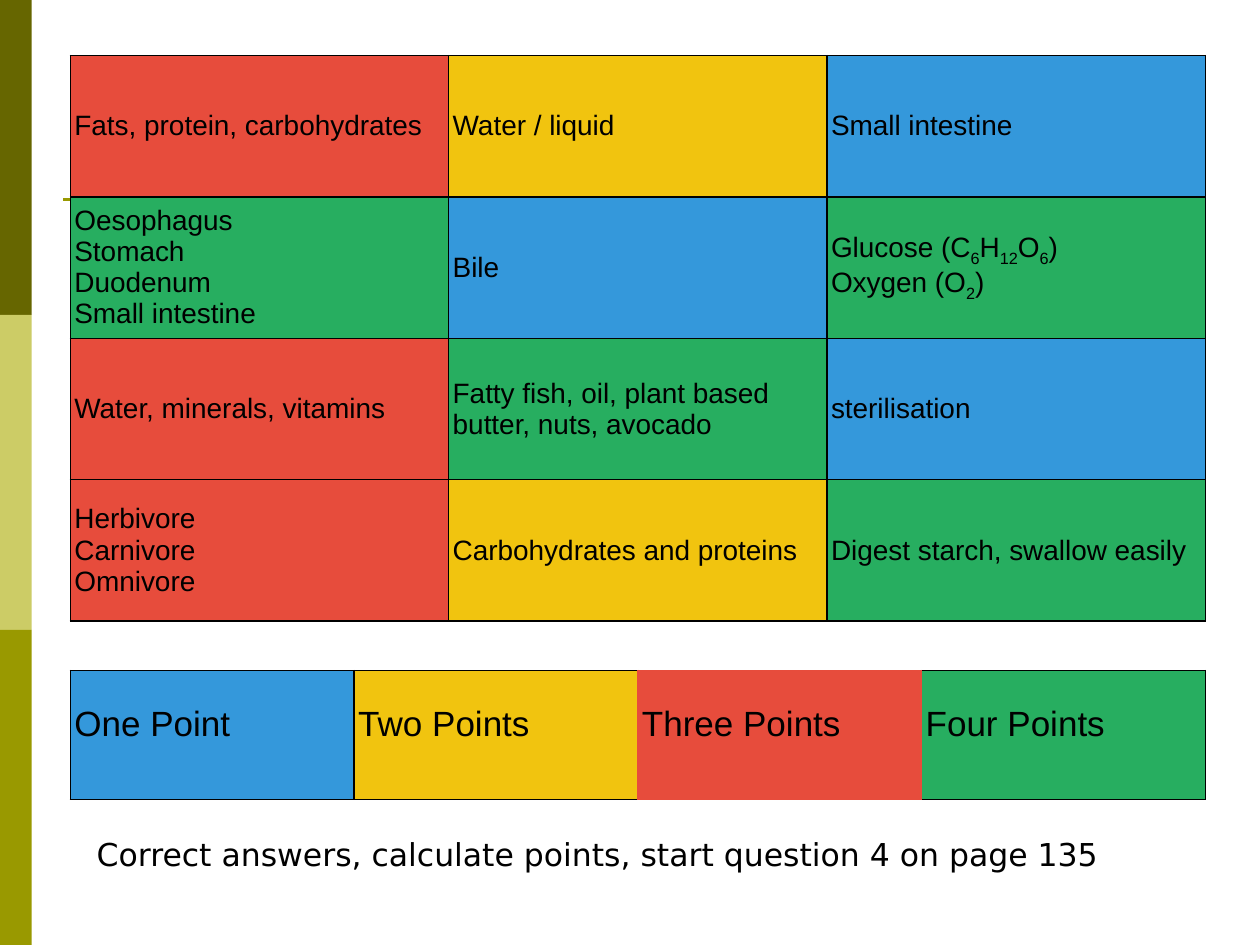
import pptx
import pptx.dml.color
import pptx.enum.shapes
import pptx.enum.text
import pptx.oxml
import pptx.oxml.ns
import pptx.util
from pptx.util import Cm

COLOURS = {
    "red": "E74C3C", "yellow": "F1C40F", "blue": "3498DB", "green": "27AE60",
    "black": "000000", "dark olive": "666600", "pale olive": "CCCC66", "olive": "999900",
}

# A bar in an answer starts or ends a subscript.
ANSWERS = [
    [("red", ["Fats, protein, carbohydrates"]),
     ("yellow", ["Water / liquid"]),
     ("blue", ["Small intestine"])],
    [("green", ["Oesophagus", "Stomach", "Duodenum", "Small intestine"]),
     ("blue", ["Bile"]),
     ("green", ["Glucose (C|6|H|12|O|6|)", "Oxygen (O|2|)"])],
    [("red", ["Water, minerals, vitamins"]),
     ("green", ["Fatty fish, oil, plant based butter, nuts, avocado"]),
     ("blue", ["sterilisation"])],
    [("red", ["Herbivore", "Carnivore", "Omnivore"]),
     ("yellow", ["Carbohydrates and proteins"]),
     ("green", ["Digest starch, swallow easily"])],
]
POINTS = [[("blue", ["One Point"]), ("yellow", ["Two Points"]),
           ("red", ["Three Points"]), ("green", ["Four Points"])]]
POINT_BORDERS = {1: {"R": "red"}, 2: dict.fromkeys("LRTB", "red"), 3: {"L": "red"}}


def rgb(name):
    return pptx.dml.color.RGBColor.from_string(COLOURS[name])


class Builder:
    table_font = "Arial"
    note_font = "DejaVu Sans"
    inset = Cm(0.08)

    def __init__(self, page):
        self.page = page

    def add_spans(self, para, text, size, font):
        for index, part in enumerate(text.split("|")):
            span = para.add_run()
            span.text = part
            span.font.size = pptx.util.Pt(size)
            span.font.name = font
            span.font.color.rgb = rgb("black")
            if index % 2:
                span.font._element.set("baseline", "-25000")

    def bar(self, left, top, width, height, colour):
        shape = self.page.shapes.add_shape(
            pptx.enum.shapes.MSO_SHAPE.RECTANGLE, left, top, width, height)
        shape.shadow.inherit = False
        shape.fill.solid()
        shape.fill.fore_color.rgb = rgb(colour)
        shape.line.fill.background()

    def rule(self, left, right, top, colour):
        line = self.page.shapes.add_connector(
            pptx.enum.shapes.MSO_CONNECTOR.STRAIGHT, left, top, right, top)
        line.line.color.rgb = rgb(colour)
        line.line.width = pptx.util.Pt(1.5)
        line._element.spPr.append(pptx.oxml.parse_xml(
            f"<a:effectLst {pptx.oxml.ns.nsdecls('a')}/>"))

    def borders(self, cell, changes):
        """Draw black cell borders, except for the sides in changes."""
        properties = cell._tc.get_or_add_tcPr()
        for side in "LRTB":
            colour = COLOURS[changes.get(side, "black")]
            properties.append(pptx.oxml.parse_xml(
                f'<a:ln{side} {pptx.oxml.ns.nsdecls("a")} w="12700"><a:solidFill>'
                f'<a:srgbClr val="{colour}"/></a:solidFill></a:ln{side}>'))

    def table(self, left, top, width, height, rows, size, bottom=inset, changes=None):
        """Draw a grid of (colour, lines) cells; changes holds borders by column."""
        table = self.page.shapes.add_table(
            len(rows), len(rows[0]), left, top, width, height).table
        table.first_row = table.horz_banding = False
        for row_index, row in enumerate(rows):
            for column, (colour, lines) in enumerate(row):
                cell = table.cell(row_index, column)
                cell.margin_left = cell.margin_right = cell.margin_top = self.inset
                cell.margin_bottom = bottom
                cell.vertical_anchor = pptx.enum.text.MSO_ANCHOR.MIDDLE
                self.borders(cell, (changes or {}).get(column, {}))
                cell.fill.solid()
                cell.fill.fore_color.rgb = rgb(colour)
                frame = cell.text_frame
                for index, text in enumerate(lines):
                    para = frame.add_paragraph() if index else frame.paragraphs[0]
                    self.add_spans(para, text, size, self.table_font)

    def note(self, left, top, width, height, text, size):
        box = self.page.shapes.add_textbox(left, top, width, height)
        box.text_frame.word_wrap = True
        self.add_spans(box.text_frame.paragraphs[0], text, size, self.note_font)


def main():
    deck = pptx.Presentation()
    deck.slide_width, deck.slide_height = Cm(25.4), Cm(19.05)
    builder = Builder(deck.slides.add_slide(deck.slide_layouts[6]))

    for index, colour in enumerate(["dark olive", "pale olive", "olive"]):
        builder.bar(0, Cm(6.35 * index), Cm(0.64), Cm(6.35), colour)
    builder.rule(Cm(1.27), Cm(23.7), Cm(4.02), "olive")

    # The deeper bottom margin lifts the point labels above the middle.
    builder.table(Cm(1.42), Cm(13.52), Cm(22.88), Cm(2.6), POINTS, 20,
                  bottom=Cm(0.51), changes=POINT_BORDERS)
    builder.table(Cm(1.42), Cm(1.12), Cm(22.88), Cm(11.4), ANSWERS, 16)
    builder.note(Cm(1.7), Cm(16.71), Cm(21.6), Cm(1.02),
                 "Correct answers, calculate points, start question 4 on page 135", 18)
    deck.save("out.pptx")


if __name__ == "__main__":
    main()
